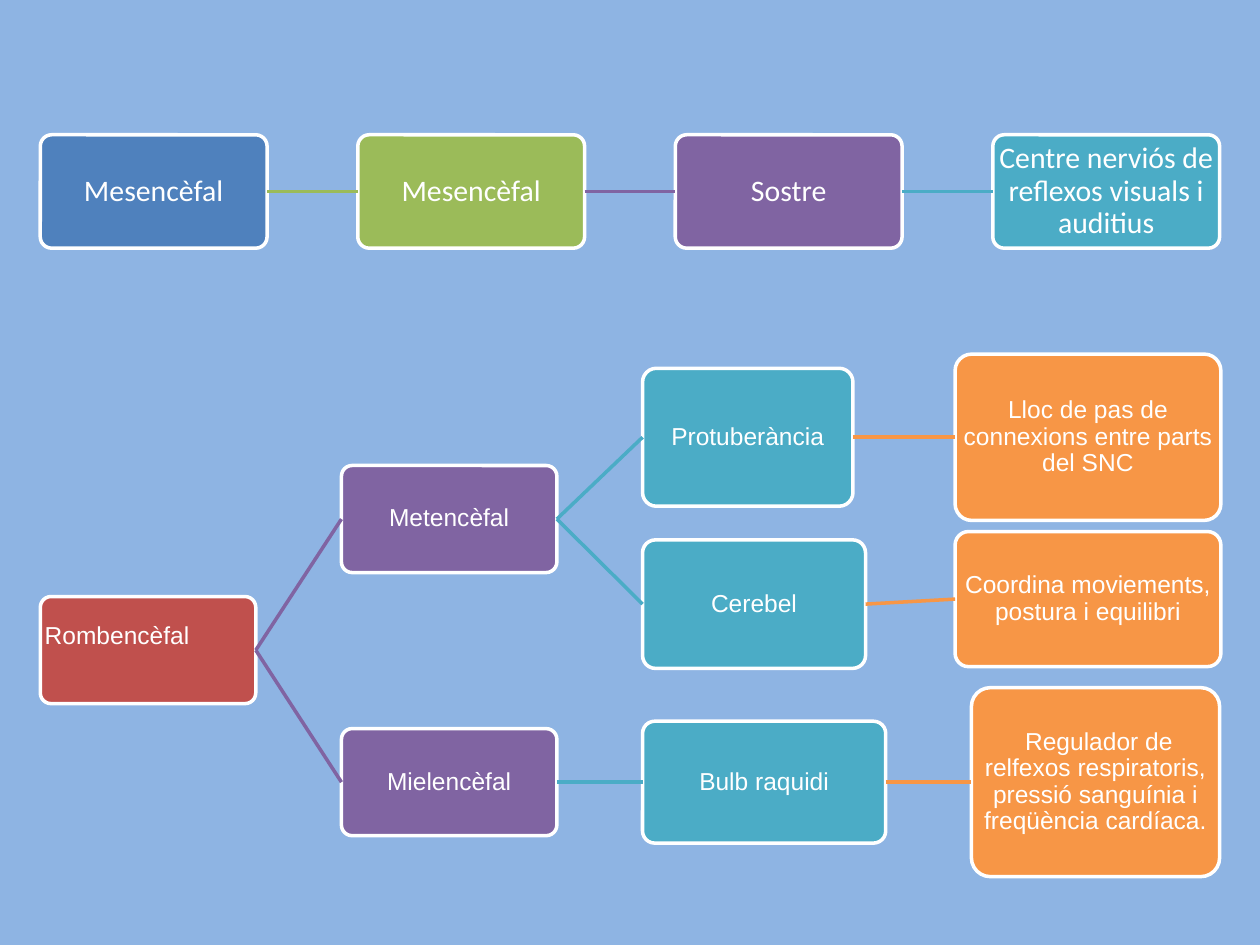
from lxml import etree
from pptx import Presentation
from pptx.dml.color import RGBColor
from pptx.enum.shapes import MSO_CONNECTOR, MSO_SHAPE
from pptx.enum.text import MSO_ANCHOR, PP_ALIGN
from pptx.oxml.ns import qn
from pptx.util import Inches, Pt

ROUNDED = MSO_SHAPE.ROUNDED_RECTANGLE
STRAIGHT = MSO_CONNECTOR.STRAIGHT
MIDDLE = MSO_ANCHOR.MIDDLE
CENTER, LEFT = PP_ALIGN.CENTER, PP_ALIGN.LEFT
LEFT_SIDE, RIGHT_SIDE = 1, 3

BLUE, GREEN, PURPLE = "4F81BD", "9BBB59", "8064A2"
TEAL, RED, ORANGE = "4BACC6", "C0504D", "F79646"
WHITE, SKY = "FFFFFF", "8EB4E3"


def color(value):
    return RGBColor.from_string(value)


deck = Presentation()
deck.slide_width, deck.slide_height = Inches(10), Inches(7.5)
page = deck.slides.add_slide(deck.slide_layouts[6])
page.background.fill.solid()
page.background.fill.fore_color.rgb = color(SKY)
across, down = deck.slide_width / 100, deck.slide_height / 100

MARGIN = 3.2
TOP_STEP, TREE_STEP = 25.2, 23.9
TOP_MIDDLE, ROOT_MIDDLE = 20.27, 68.8
UPPER, LOWER = 54.93, 82.77
TOP_SIZE, BRANCH_SIZE = (18, 12), (17.1, 11.33)

top_row = [
    ("Mesencèfal", BLUE),
    ("Mesencèfal", GREEN),
    ("Sostre", PURPLE),
    ("Centre nerviós de reflexos visuals i auditius", TEAL),
]
nodes = [
    (text, index - 1 if index else None, MARGIN + index * TOP_STEP, TOP_MIDDLE,
     TOP_SIZE, fill, "Calibri", 17)
    for index, (text, fill) in enumerate(top_row)
]

second, third = MARGIN + TREE_STEP, MARGIN + 2 * TREE_STEP
tree = [
    ("Rombencèfal", None, MARGIN, ROOT_MIDDLE, BRANCH_SIZE, RED),
    ("Metencèfal", 4, second, UPPER, BRANCH_SIZE, PURPLE),
    ("Protuberància", 5, third, 46.27, (16.7, 14.6), TEAL),
    ("Lloc de pas de connexions entre parts del SNC", 6, 75.8, 46.27, (21.1, 17.6), ORANGE),
    ("Cerebel", 5, third, 63.93, (17.7, 13.6), TEAL),
    ("Coordina moviements, postura i equilibri", 8, 75.8, 63.4, (21.1, 14.3), ORANGE),
    ("Mielencèfal", 4, second, LOWER, BRANCH_SIZE, PURPLE),
    ("Bulb raquidi", 10, third, LOWER, (19.3, 12.9), TEAL),
    (" Regulador de relfexos respiratoris, pressió sanguínia i freqüència cardíaca.",
     11, 77.1, LOWER, (19.7, 20), ORANGE),
]
nodes += [node + ("Arial", 14) for node in tree]

boxes = []
for text, parent, left, middle, (width, height), fill, font, size in nodes:
    box = page.shapes.add_shape(
        ROUNDED, int(left * across), int((middle - height / 2) * down),
        int(width * across), int(height * down))
    box.adjustments[0] = 0.1
    box.shadow.inherit = False
    box.fill.solid()
    box.fill.fore_color.rgb = color(fill)
    box.line.color.rgb = color(WHITE)
    box.line.width = Pt(2)
    frame = box.text_frame
    frame_format = {"word_wrap": True, "vertical_anchor": MIDDLE}
    for side in ("left", "top", "right", "bottom"):
        frame_format["margin_" + side] = Inches(0.01)
    if text == "Rombencèfal":
        frame_format["margin_bottom"] = Inches(0.22)
    for name, value in frame_format.items():
        setattr(frame, name, value)
    para = frame.paragraphs[0]
    para.alignment = LEFT if text == "Rombencèfal" else CENTER
    para.line_spacing = 0.9
    span = para.add_run()
    span.text = text
    for name, value in {"name": font, "size": Pt(size)}.items():
        setattr(span.font, name, value)
    span.font.color.rgb = color(WHITE)
    boxes.append(box)

    if parent is not None:
        link = page.shapes.add_connector(STRAIGHT, 0, 0, 0, 0)
        link.begin_connect(boxes[parent], RIGHT_SIDE)
        link.end_connect(box, LEFT_SIDE)
        link.line.color.rgb = color(fill)
        link.line.width = Pt(2)
        etree.SubElement(link._element.spPr, qn("a:effectLst"))

deck.save("out.pptx")
